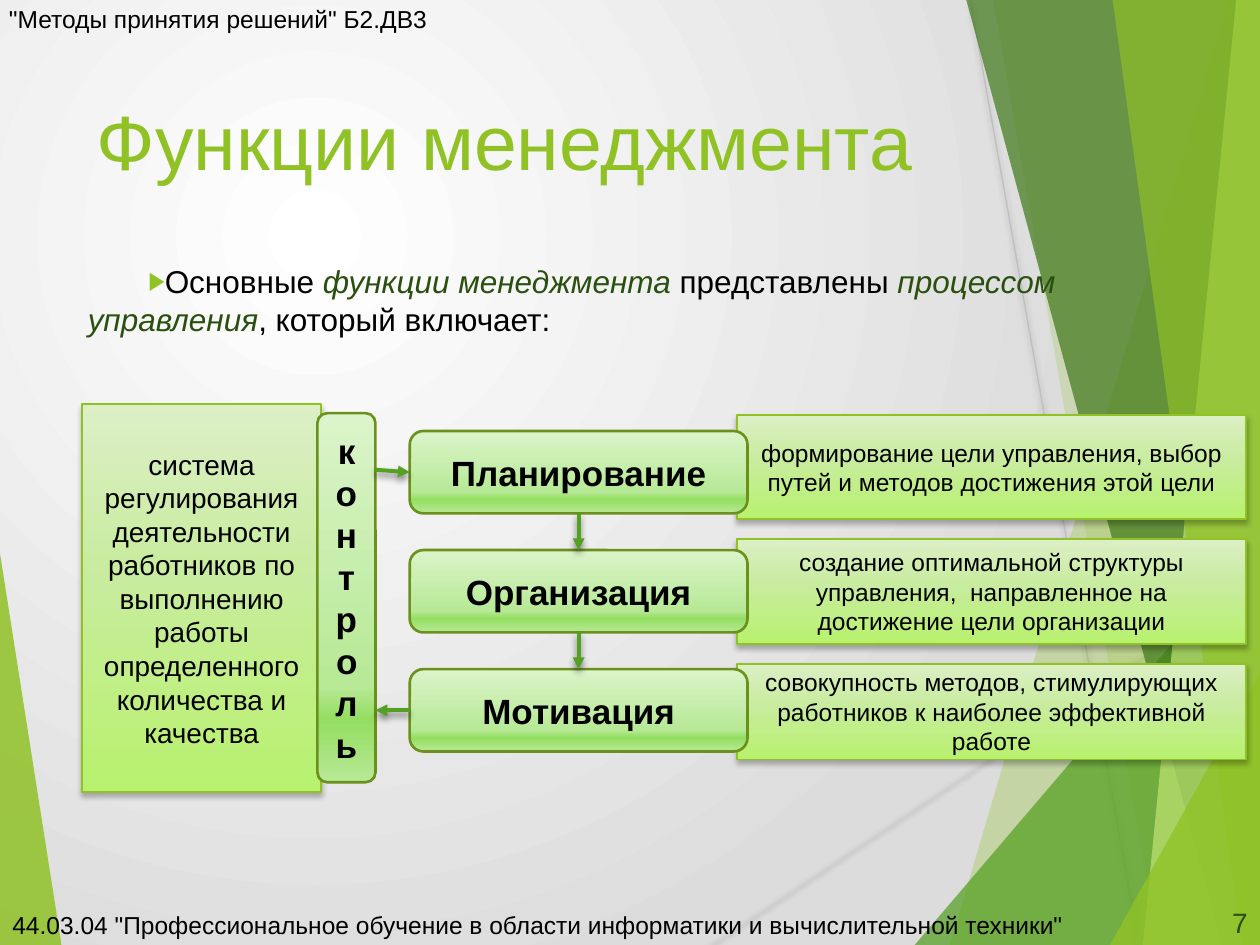
from lxml.etree import SubElement
from pptx import Presentation
from pptx.dml.color import RGBColor as RGB
from pptx.enum.shapes import MSO_CONNECTOR as LINE, MSO_SHAPE as SHAPE
from pptx.enum.text import MSO_ANCHOR as ANCHOR, PP_ALIGN as ALIGN
from pptx.oxml.ns import qn
from pptx.util import Cm, Pt

HUE = {
    "lime": "90C226", "green": "54A021", "moss": "3F7819", "pale": "C0E474",
    "olive": "6B901C", "dark": "2A5010", "black": "000000",
    "grey": "BFBFBF", "light": "D9D9D9",
}
NOTE = [(0, "DCEFC6"), (41, "C9ECA1"), (100, "B8F16E")]
TASK = [(0, "DBF4CA"), (74, "B7E996"), (83, "94DE61"), (100, "B7E996")]
BACK = [(0, "FFFFFF"), (100, "DCDCDC")]
WIDE, HIGH = 25.4, 19.05


def write(shape, text, size=14, hue="black", bold=False, align=ALIGN.LEFT,
          anchor=ANCHOR.MIDDLE):
    """Fill a shape with one paragraph; parts between asterisks are dark italics."""
    frame = shape.text_frame
    frame.word_wrap = True
    frame.vertical_anchor = anchor
    para = frame.paragraphs[0]
    para.alignment = align
    for i, part in enumerate(text.split("*")):
        run = para.add_run()
        run.text = part
        font = run.font
        font.name, font.size, font.bold = "Arial", Pt(size), bold
        font.italic = i % 2 == 1
        font.color.rgb = RGB.from_string(HUE["dark" if i % 2 else hue])
    return para


def grade(fill, stops):
    """Give a fill a top-down gradient and return its XML element."""
    fill.gradient()
    fill.gradient_angle = 270
    grad = fill._xPr.find(qn("a:gradFill"))
    items = grad.find(qn("a:gsLst"))
    items.clear()
    for pos, hue in stops:
        stop = SubElement(items, qn("a:gs"), pos=str(pos * 1000))
        SubElement(stop, qn("a:srgbClr"), val=hue)
    return grad


deck = Presentation()
deck.slide_width, deck.slide_height = Cm(WIDE), Cm(HIGH)
slide = deck.slides.add_slide(deck.slide_layouts[6])
shapes = slide.shapes

# Background: a round glow centred in the upper left
grad = grade(slide.background.fill, BACK)
grad.remove(grad.find(qn("a:lin")))
glow = SubElement(grad, qn("a:path"), path="circle")
SubElement(glow, qn("a:fillToRect"), l="50000", t="50000", r="100000", b="100000")

# Shaded items: (shape, opacity, blur, distance)
shaded = []

# Thin lines and translucent facets
low, top = (WIDE, HIGH), (WIDE, 0)
for start, end, hue in [((14.25, HIGH), (WIDE, 11.6), "light"),
                        ((19.56, 0), (22.96, HIGH), "grey")]:
    ray = shapes.add_connector(LINE.STRAIGHT, *map(Cm, start + end))
    ray.line.color.rgb = RGB.from_string(HUE[hue])
    ray.line.width = Pt(0.75)
    shaded.append((ray, 28, 3, 2))

facets = [
    ([(0, 11.15), (1.24, HIGH), (0, HIGH)], "lime", 85),
    ([(24.77, 0), (19.15, HIGH), low, top], "lime", 30),
    ([(20.02, 0), (23.34, HIGH), low, top], "lime", 20),
    ([(18.44, HIGH), (WIDE, 10.9), low], "green", 72),
    ([(19.48, 0), (24.64, HIGH), low, top], "moss", 70),
    ([(24.92, 0), (23.04, HIGH), low, top], "pale", 70),
    ([(22.43, 0), (25.04, HIGH), low, top], "lime", 65),
    ([(22.38, HIGH), (WIDE, 13.59), low], "lime", 80),
]
for dots, hue, alpha in facets:
    dots = [(Cm(x), Cm(y)) for x, y in dots]
    pen = shapes.build_freeform(*dots[0])
    pen.add_line_segments(dots[1:])
    facet = pen.convert_to_shape()
    facet.shadow.inherit = False
    facet.line.fill.background()
    facet.fill.solid()
    facet.fill.fore_color.rgb = RGB.from_string(HUE[hue])
    tint = facet._element.spPr.find(".//" + qn("a:srgbClr"))
    SubElement(tint, qn("a:alpha"), val=str(alpha * 1000))

# Title, lead, header, footer and page number
labels = [
    ((1.7, 1.7, 17.63, 2.18), "Функции менеджмента",
     dict(size=44, hue="lime", anchor=ANCHOR.BOTTOM)),
    ((1.52, 5.16, 21.97, 1.68), "Основные *функции менеджмента* представлены "
     "*процессом управления*, который включает:", dict(size=18, anchor=ANCHOR.TOP)),
    ((0, 0, 17.2, 0.76), '"Методы принятия решений" Б2.ДВ3', {}),
    ((0, 18.26, 23.7, 0.76), '44.03.04 "Профессиональное обучение в области '
     'информатики и вычислительной техники"', {}),
    ((23.98, 18.21, 1.42, 0.76), "7", dict(size=16, hue="dark", align=ALIGN.RIGHT)),
]
paras = []
for place, text, style in labels:
    box = shapes.add_textbox(*map(Cm, place))
    paras.append(write(box, text, **style))
    if place[:2] == (0, 0):
        box.text_frame.margin_left = Cm(0.18)

prop = paras[1]._p.get_or_add_pPr()
prop.set("marL", "0")
prop.set("indent", str(Cm(1.22)))
SubElement(SubElement(prop, qn("a:buClr")), qn("a:srgbClr"), val=HUE["lime"])
SubElement(prop, qn("a:buSzPct"), val="80000")
SubElement(prop, qn("a:buFont"), typeface="Arial")
SubElement(prop, qn("a:buChar"), char="▶")

# Notes behind, functions in front
notes = [
    "формирование цели управления, выбор путей и методов достижения этой цели",
    "создание оптимальной структуры управления,  направленное на достижение "
    "цели организации",
    "совокупность методов, стимулирующих работников к наиболее эффективной работе",
]
tasks = ["Планирование", "Организация", "Мотивация"]
boxes = [((14.86, 8.36 + 2.51 * i, 10.26, 1.93 if i == 2 else 2.11), text, 14, False)
         for i, text in enumerate(notes)]
boxes.append(((1.65, 8.15, 4.83, 7.82),
              "система регулирования деятельности работников по выполнению "
              "работы определенного количества и качества", 16, False))
boxes += [((8.26, 8.69 + 2.4 * i, 6.81, 1.66), text, 20, True)
          for i, text in enumerate(tasks)]
boxes.append(((6.4, 8.33, 1.17, 7.44), "контроль", 20, True))

front = []
for place, text, size, main in boxes:
    kind = SHAPE.ROUNDED_RECTANGLE if main else SHAPE.RECTANGLE
    box = shapes.add_shape(kind, *map(Cm, place))
    box.shadow.inherit = False
    grade(box.fill, TASK if main else NOTE)
    box.line.color.rgb = RGB.from_string(HUE["olive" if main else "lime"])
    box.line.width = Pt(1.5 if main else 1)
    write(box, text, size=size, bold=main, align=ALIGN.CENTER)
    if main:
        front.append(box)
    else:
        shaded.append((box, 28, 3, 2))

# Arrows of the cycle: start, end, joined start, joined end
plan, order, drive, check = front
edge = check.left + check.width
links = [
    ((edge, Cm(9.47)), (0, 0), None, (plan, 1)),
    ((0, 0), (0, 0), (plan, 2), (order, 0)),
    ((0, 0), (0, 0), (order, 2), (drive, 0)),
    ((0, 0), (edge, drive.top + drive.height // 2), (drive, 1), None),
]
for start, end, tail, head in links:
    arrow = shapes.add_connector(LINE.STRAIGHT, *start, *end)
    if tail:
        arrow.begin_connect(*tail)
    if head:
        arrow.end_connect(*head)
    arrow.line.color.rgb = RGB.from_string(HUE["green"])
    arrow.line.width = Pt(2.25)
    SubElement(arrow.line._get_or_add_ln(), qn("a:tailEnd"), type="triangle")
    shaded.append((arrow, 47, 4, 2.5))

for shape, alpha, blur, dist in shaded:
    prop = shape._element.spPr
    effect = prop.find(qn("a:effectLst"))
    if effect is None:
        effect = SubElement(prop, qn("a:effectLst"))
    shade = SubElement(effect, qn("a:outerShdw"), blurRad=str(Pt(blur)),
                       dist=str(Pt(dist)), dir="5400000", rotWithShape="0")
    tint = SubElement(shade, qn("a:srgbClr"), val=HUE["black"])
    SubElement(tint, qn("a:alpha"), val=str(alpha * 1000))

deck.save("out.pptx")
